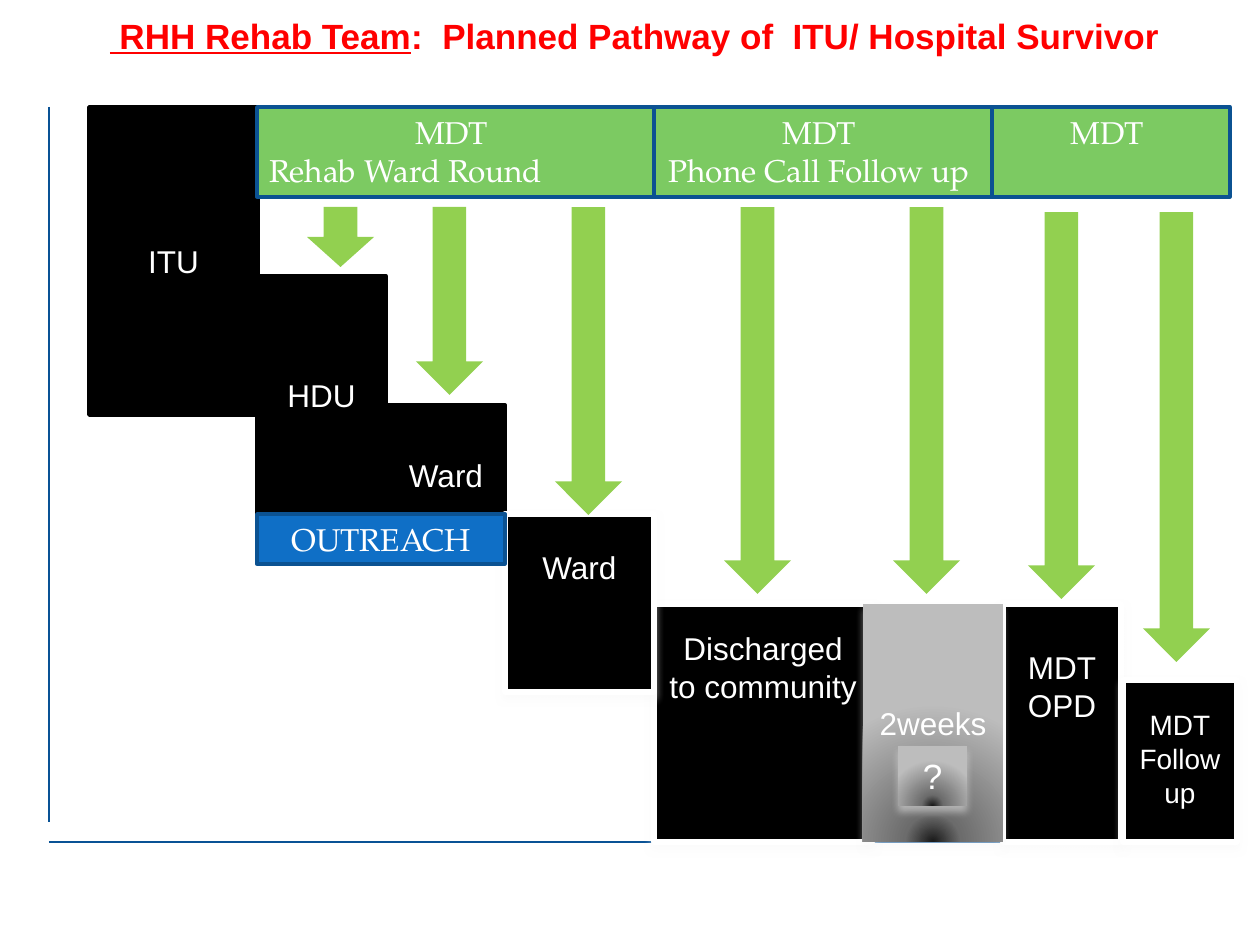
import pptx
import pptx.util
import pptx.oxml
import pptx.oxml.ns
import pptx.dml.color
import pptx.enum.shapes
import pptx.enum.text

RGB = pptx.dml.color.RGBColor
FORM = pptx.enum.shapes.MSO_SHAPE
ANCHOR = pptx.enum.text.MSO_ANCHOR
ALIGN = pptx.enum.text.PP_ALIGN

BLACK = RGB(0x00, 0x00, 0x00)
WHITE = RGB(0xFF, 0xFF, 0xFF)
RED = RGB(0xFF, 0x00, 0x00)
BLUE = RGB(0x0F, 0x6F, 0xC6)
NAVY = RGB(0x0B, 0x52, 0x92)
AXIS = RGB(0x09, 0x52, 0x95)
GREEN = RGB(0x7C, 0xCA, 0x62)
LIME = RGB(0x92, 0xD0, 0x50)
GLOW = RGB(0xF8, 0xF8, 0xF8)

SANS = "Arial"
SERIF = "TeX Gyre Pagella"
SCALE = 914400 / 126  # EMU in one px
NS = pptx.oxml.ns.nsdecls("a")


def px(*nums):
    return [pptx.util.Emu(round(n * SCALE)) for n in nums]


def style(item, values):
    for name, value in values.items():
        setattr(item, name, value)


def add_run(para, text, color=WHITE, **font):
    run = para.add_run()
    run.text = text
    style(run.font, font)
    run.font.color.rgb = color


def write(shape, lines, size=18, face=SANS, top=None, first=ALIGN.CENTER, last=ALIGN.CENTER):
    """Centre the lines in the shape, or start them top px below its edge."""
    frame = shape.text_frame
    look = {"word_wrap": True, "vertical_anchor": ANCHOR.MIDDLE}
    if top is not None:
        look.update(vertical_anchor=ANCHOR.TOP, margin_top=px(top)[0])
    style(frame, look)
    for i, text in enumerate(lines):
        para = frame.add_paragraph() if i else frame.paragraphs[0]
        para.alignment = last if i else first
        add_run(para, text, size=pptx.util.Pt(size), name=face)


def add_form(slide, form, box, fill=None, edge=None, width=2):
    shape = slide.shapes.add_shape(form, *px(*box))
    shape.shadow.inherit = False
    if fill is not None:
        shape.fill.solid()
        shape.fill.fore_color.rgb = fill
    if edge is None:
        shape.line.fill.background()
    else:
        shape.line.color.rgb = edge
        shape.line.width = pptx.util.Pt(width)
    return shape


def add_glow(shape):
    effects = shape._element.spPr.find(pptx.oxml.ns.qn("a:effectLst"))
    effects.append(pptx.oxml.parse_xml(
        f'<a:outerShdw {NS} blurRad="57150" dist="38100" dir="5400000" algn="ctr" '
        f'rotWithShape="0"><a:srgbClr val="{GLOW}"><a:alpha val="48000"/></a:srgbClr>'
        '</a:outerShdw>'))


def add_step(slide, box, lines, **text):
    shape = add_form(slide, FORM.RECTANGLE, box, BLACK, WHITE, 3)
    add_glow(shape)
    write(shape, lines, **text)


def add_fade(slide, box, text, size, mid):
    """Grey box shaded outward from the middle of its lower edge."""
    shape = add_form(slide, FORM.RECTANGLE, box)
    stops = ((0, "191919"), (mid, "6C6C6C"), (100, "BDBDBD"))
    marks = "".join(f'<a:gs pos="{pos * 1000}"><a:srgbClr val="{tone}"/></a:gs>'
                    for pos, tone in stops)
    shape._element.spPr.find(pptx.oxml.ns.qn("a:prstGeom")).addnext(pptx.oxml.parse_xml(
        f'<a:gradFill {NS} rotWithShape="1"><a:gsLst>{marks}</a:gsLst>'
        '<a:path path="circle"><a:fillToRect l="50000" t="100000" r="50000"/></a:path>'
        '</a:gradFill>'))
    add_glow(shape)
    write(shape, [text], size)


def add_axis(slide, *ends):
    kind = pptx.enum.shapes.MSO_CONNECTOR.STRAIGHT
    line = slide.shapes.add_connector(kind, *px(*ends))
    line.line.color.rgb = AXIS
    line.line.width = pptx.util.Pt(0.75)
    line._element.spPr.append(pptx.oxml.parse_xml(f"<a:effectLst {NS}/>"))


def add_title(slide):
    frame = slide.shapes.add_textbox(*px(49, 0, 1181, 70)).text_frame
    style(frame, {"word_wrap": True, "vertical_anchor": ANCHOR.MIDDLE})
    para = frame.paragraphs[0]
    para.alignment = ALIGN.CENTER
    font = {"size": pptx.util.Pt(20), "name": SANS, "bold": True}
    add_run(para, " RHH Rehab Team", RED, underline=True, **font)
    add_run(para, ":  Planned Pathway of  ITU/ Hospital Survivor ", RED,
            underline=False, **font)


def main():
    deck = pptx.Presentation()
    deck.slide_width, deck.slide_height = px(1260, 945)
    slide = deck.slides.add_slide(deck.slide_layouts[6])

    # Axes
    add_axis(slide, 49, 107, 49, 822)
    add_axis(slide, 49, 842, 1230, 842)

    # Hospital steps
    for box, text in (((89, 107, 169, 308), "ITU"),
                      ((257, 276, 129, 238), "HDU"),
                      ((387, 405, 118, 139), "Ward")):
        write(add_form(slide, FORM.RECTANGLE, box, BLACK, BLACK), [text])

    # Ward and community steps
    add_step(slide, (654, 604, 218, 238), ["Discharged to community"], top=25)
    add_step(slide, (505, 514, 149, 178), ["Ward"], top=34)
    add_step(slide, (1003, 604, 118, 238), ["MDT", "OPD"], top=44)
    add_fade(slide, (863, 604, 140, 238), "2weeks", 18, 20)
    add_fade(slide, (898, 746, 69, 60), "?", 20, 24)
    add_step(slide, (1123, 680, 114, 162), ["MDT", "Follow", "up"], size=16, top=28)

    # Outreach
    outreach = add_form(slide, FORM.RECTANGLE, (257, 514, 248, 50), BLUE, NAVY)
    write(outreach, ["OUTREACH"], face=SERIF)

    # Team band
    for left, wide, lines, last in (
            (257, 397, ["MDT ", "Rehab Ward Round"], ALIGN.LEFT),
            (654, 338, ["MDT ", "Phone Call Follow up "], ALIGN.CENTER),
            (992, 238, ["MDT "], ALIGN.CENTER)):
        band = add_form(slide, FORM.RECTANGLE, (left, 107, wide, 90), GREEN, NAVY)
        write(band, lines, face=SERIF, top=6, last=last)

    # Arrows from the band to the steps
    for left, top, high in ((307, 207, 60), (416, 207, 188), (555, 207, 308),
                            (724, 207, 387), (893, 207, 387),
                            (1028, 212, 387), (1143, 212, 450)):
        add_form(slide, FORM.DOWN_ARROW, (left, top, 67, high), LIME)

    add_title(slide)
    deck.save("out.pptx")


if __name__ == "__main__":
    main()
